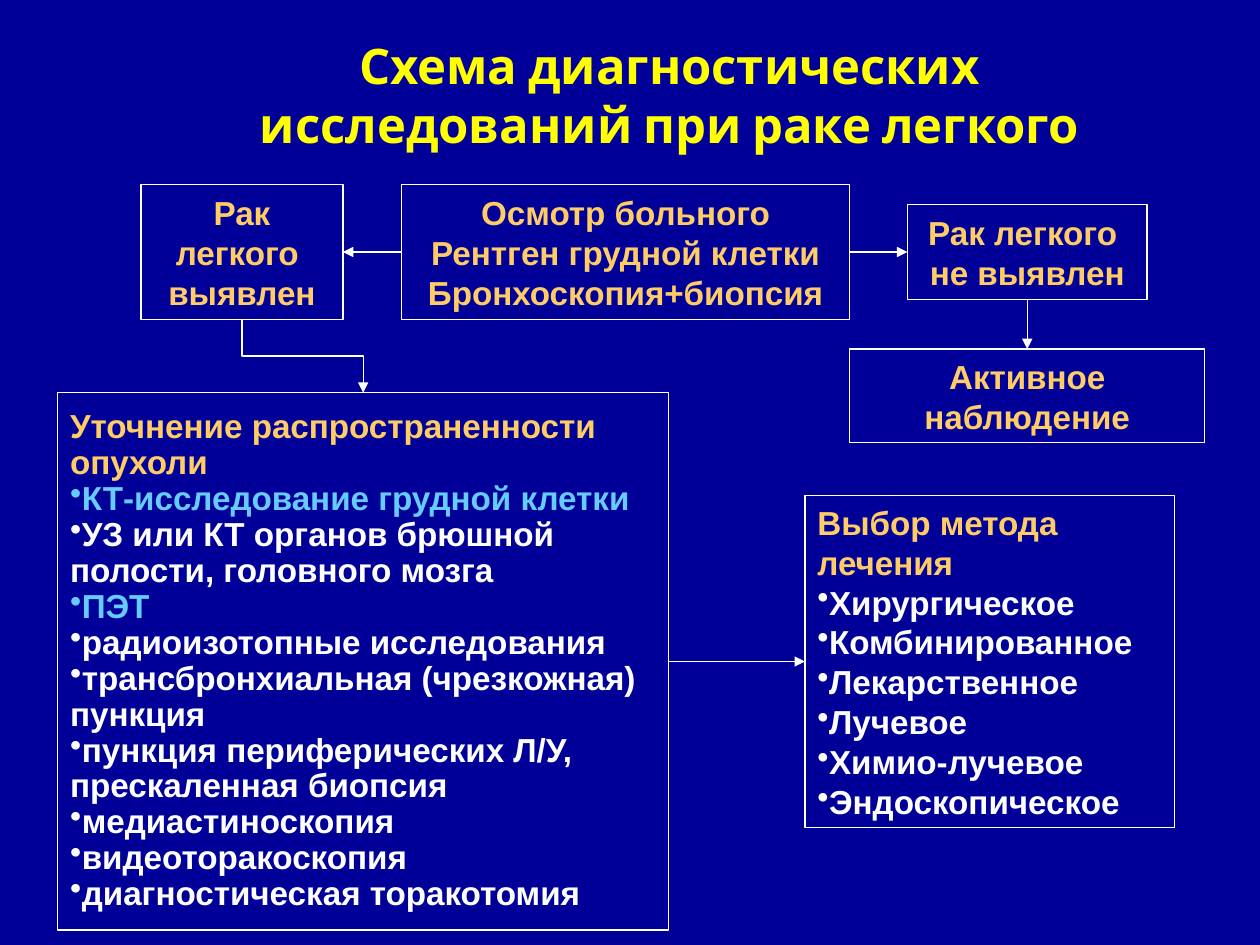
from dataclasses import dataclass

from lxml.etree import SubElement
from pptx import Presentation
from pptx.dml.color import RGBColor
from pptx.enum.shapes import MSO_CONNECTOR as Connector, MSO_SHAPE as Shape
from pptx.enum.text import MSO_ANCHOR as Anchor, PP_ALIGN as Align
from pptx.oxml.ns import qn
from pptx.util import Pt


@dataclass(frozen=True)
class Theme:
    background: RGBColor = RGBColor(0x00, 0x00, 0x99)
    title: RGBColor = RGBColor(0xFF, 0xFF, 0x00)
    heading: RGBColor = RGBColor(0xFF, 0xCC, 0x66)
    accent: RGBColor = RGBColor(0x66, 0xCC, 0xFF)
    plain: RGBColor = RGBColor(0xFF, 0xFF, 0xFF)
    title_font: str = "Cabin"
    body_font: str = "Arial"
    title_size: float = 28
    body_size: float = 19
    line_width: float = 0.75


THEME = Theme()
TOP, LEFT, BOTTOM, RIGHT = range(4)

SPREAD_HEADING = ["Уточнение распространенности", "опухоли"]
SPREAD_ITEMS = [
    "КТ-исследование грудной клетки",
    "УЗ или КТ органов брюшной полости, головного мозга",
    "ПЭТ",
    "радиоизотопные исследования",
    "трансбронхиальная (чрезкожная) пункция",
    "пункция периферических Л/У, прескаленная биопсия",
    "медиастиноскопия",
    "видеоторакоскопия",
    "диагностическая торакотомия",
]
KEY_ITEMS = {"КТ-исследование грудной клетки", "ПЭТ"}
TREATMENT_ITEMS = [
    "Хирургическое", "Комбинированное", "Лекарственное",
    "Лучевое", "Химио-лучевое", "Эндоскопическое",
]


def style_font(font, name, size, color):
    font.name = name
    font.size = Pt(size)
    font.bold = True
    font.color.rgb = color


def add_bullet(paragraph):
    properties = paragraph._p.get_or_add_pPr()
    properties.set("marL", "0")
    properties.set("indent", "0")
    SubElement(properties, qn("a:buChar")).set("char", "•")


def add_title(slide, text):
    title = slide.shapes.add_textbox(Pt(99), Pt(9), Pt(567), Pt(90))
    frame = title.text_frame
    frame.word_wrap = True
    frame.vertical_anchor = Anchor.MIDDLE
    frame.text = text
    paragraph = frame.paragraphs[0]
    paragraph.alignment = Align.CENTER
    style_font(paragraph.font, THEME.title_font, THEME.title_size, THEME.title)


def add_box(slide, bounds, headings, items=(), align=Align.CENTER, spacing=None):
    shape = slide.shapes.add_shape(Shape.RECTANGLE, *map(Pt, bounds))
    shape.shadow.inherit = False
    shape.fill.background()
    shape.line.color.rgb = THEME.plain
    shape.line.width = Pt(THEME.line_width)
    frame = shape.text_frame
    frame.word_wrap = True
    frame.vertical_anchor = Anchor.MIDDLE
    frame.text = "\n".join([*headings, *items])
    for index, paragraph in enumerate(frame.paragraphs):
        paragraph.alignment = align
        if spacing:
            paragraph.line_spacing = spacing
        color = THEME.heading
        if index >= len(headings):
            add_bullet(paragraph)
            color = THEME.accent if paragraph.text in KEY_ITEMS else THEME.plain
        style_font(paragraph.font, THEME.body_font, THEME.body_size, color)
    return shape


def add_arrow(slide, start, start_side, end, end_side, kind=Connector.STRAIGHT):
    arrow = slide.shapes.add_connector(kind, 0, 0, 0, 0)
    arrow.begin_connect(start, start_side)
    arrow.end_connect(end, end_side)
    arrow.line.color.rgb = THEME.plain
    arrow.line.width = Pt(THEME.line_width)
    SubElement(arrow.line._get_or_add_ln(), qn("a:tailEnd")).set("type", "triangle")
    SubElement(arrow._element.spPr, qn("a:effectLst"))
    return arrow


def turn_downward(arrow):
    across, down = arrow.width, arrow.height
    arrow.left += (across - down) // 2
    arrow.top += (down - across) // 2
    arrow.width, arrow.height = down, across
    transform = arrow._element.spPr.find(qn("a:xfrm"))
    transform.set("rot", str(270 * 60000))
    transform.set("flipH", "1")


def main():
    presentation = Presentation()
    presentation.slide_width = Pt(720)
    presentation.slide_height = Pt(540)
    slide = presentation.slides.add_slide(presentation.slide_layouts[6])
    slide.background.fill.solid()
    slide.background.fill.fore_color.rgb = THEME.background

    add_title(slide, "Схема диагностических исследований при раке легкого")
    examination = add_box(
        slide, (229.5, 105.5, 256, 77),
        ["Осмотр больного", "Рентген грудной клетки", "Бронхоскопия+биопсия"])
    found = add_box(slide, (80.5, 105.5, 115.5, 77), ["Рак легкого ", "выявлен"])
    spread = add_box(
        slide, (33, 224.5, 349, 307), SPREAD_HEADING, SPREAD_ITEMS, Align.LEFT, 0.9)
    treatment = add_box(
        slide, (460, 283, 211, 190), ["Выбор метода лечения"], TREATMENT_ITEMS, Align.LEFT)
    not_found = add_box(slide, (518.5, 117, 137, 54), ["Рак легкого ", "не выявлен"])
    observation = add_box(slide, (485.5, 199.5, 203, 53.5), ["Активное наблюдение"])

    add_arrow(slide, examination, LEFT, found, RIGHT)
    add_arrow(slide, spread, RIGHT, treatment, LEFT)
    add_arrow(slide, not_found, BOTTOM, observation, TOP)
    add_arrow(slide, examination, RIGHT, not_found, LEFT)
    turn_downward(add_arrow(slide, found, BOTTOM, spread, TOP, Connector.ELBOW))

    presentation.save("out.pptx")


if __name__ == "__main__":
    main()
